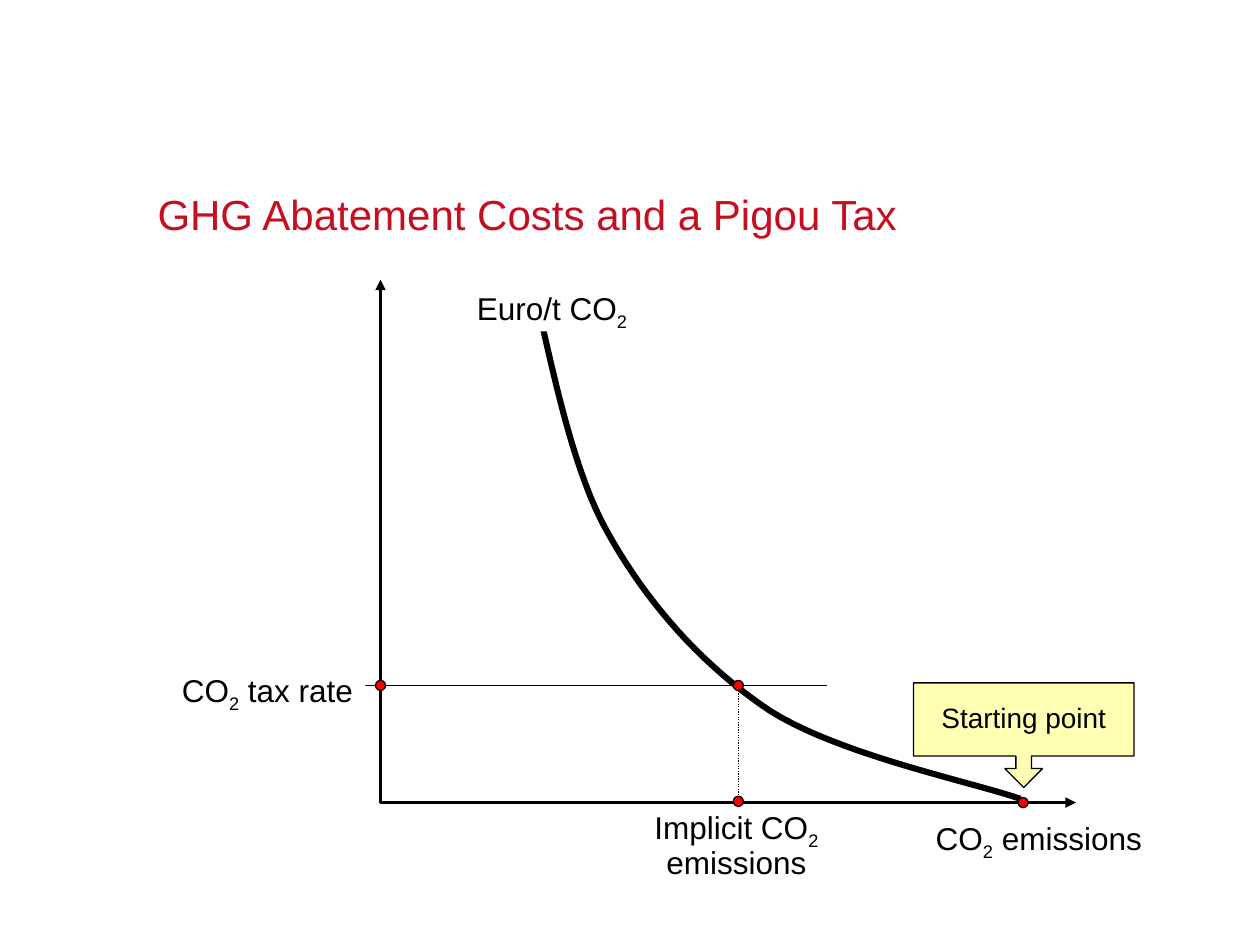
from pptx import Presentation
from pptx.dml.color import RGBColor
from pptx.enum.dml import MSO_LINE
from pptx.enum.shapes import MSO_CONNECTOR, MSO_SHAPE
from pptx.enum.text import MSO_ANCHOR, PP_ALIGN
from pptx.oxml.ns import qn
from pptx.util import Inches, Pt
from lxml.etree import SubElement

COLORS = {"black": "000000", "white": "FFFFFF", "title": "C50E1F",
          "dot": "FF0000", "callout": "FFFFB3"}

prs = Presentation()
prs.slide_width, prs.slide_height = Inches(10), Inches(7.5)
slide = prs.slides.add_slide(prs.slide_layouts[6])
shapes = slide.shapes


def write(shape, text, size=18, color="black", align=PP_ALIGN.CENTER, spacing=0.9,
          anchor=MSO_ANCHOR.TOP, margins=(0.1, 0.05), wrap=True):
    """Fill a shape with one paragraph; a 2 is set as a subscript."""
    frame = shape.text_frame
    frame.word_wrap = wrap
    frame.vertical_anchor = anchor
    frame.margin_left = frame.margin_right = Inches(margins[0])
    frame.margin_top = frame.margin_bottom = Inches(margins[1])
    paragraph = frame.paragraphs[0]
    paragraph.alignment = align
    paragraph.line_spacing = spacing
    for part in filter(None, text.partition("2")):
        run = paragraph.add_run()
        run.text = part
        run.font.name = "Arial"
        run.font.size = Pt(size)
        run.font.color.rgb = RGBColor.from_string(COLORS[color])
        if part == "2":
            run._r.get_or_add_rPr().set("baseline", "-25000")


def add_line(start, end, width=0.75, dotted=False, arrow=False):
    line = shapes.add_connector(MSO_CONNECTOR.STRAIGHT,
                                *(Inches(v) for v in (*start, *end)))
    line.line.color.rgb = RGBColor.from_string(COLORS["black"])
    line.line.width = Pt(width)
    if dotted:
        line.line.dash_style = MSO_LINE.ROUND_DOT
    if arrow:
        SubElement(line.line._get_or_add_ln(), qn("a:tailEnd"), type="triangle")
    SubElement(line._element.spPr, qn("a:effectLst"))


# Title
title = shapes.add_textbox(Inches(1.25), Inches(0.93), Inches(7.41), Inches(0.97))
write(title, "GHG Abatement Costs and a Pigou Tax", size=24, color="title",
      align=PP_ALIGN.LEFT, spacing=Pt(30), anchor=MSO_ANCHOR.BOTTOM, margins=(0, 0))

# Axes and tax level
origin = (3.02, 6.37)
add_line((6.56, 5.44), (2.88, 5.44))
add_line(origin, (8.54, 6.37), width=2, arrow=True)
add_line(origin, (3.02, 2.22), width=2, arrow=True)

# Abatement cost curve, sampled from three cubic Bezier segments
curve_nodes = [(4.23, 2.29), (4.33, 2.61), (4.5, 3.66), (4.82, 4.22), (5.13, 4.78),
               (5.57, 5.28), (6.11, 5.64), (6.66, 5.99), (7.69, 6.2), (8.1, 6.34)]
STEPS = 20
curve_points = [tuple(Inches(v) for v in curve_nodes[0])]
for first in range(0, len(curve_nodes) - 1, 3):
    nodes = curve_nodes[first:first + 4]
    for step in range(1, STEPS + 1):
        t = step / STEPS
        weights = ((1 - t) ** 3, 3 * t * (1 - t) ** 2, 3 * t * t * (1 - t), t ** 3)
        curve_points.append(tuple(
            Inches(sum(w * node[axis] for w, node in zip(weights, nodes)))
            for axis in (0, 1)))
builder = shapes.build_freeform(*curve_points[0])
builder.add_line_segments(curve_points[1:], close=False)
cost_curve = builder.convert_to_shape()
cost_curve.shadow.inherit = False
cost_curve.fill.background()
cost_curve.line.color.rgb = RGBColor.from_string(COLORS["black"])
cost_curve.line.width = Pt(3.5)

# Labels: text, box, alignment, line spacing, white backing
labels = [
    ("Implicit CO2 emissions", (4.88, 6.37, 1.93, 0.65), PP_ALIGN.CENTER, 0.9, False),
    ("Euro/t CO2", (3.17, 2.25, 2.42, 0.38), PP_ALIGN.CENTER, 0.9, True),
    ("CO2 emissions", (6.83, 6.42, 2.83, 0.41), PP_ALIGN.CENTER, 1.1, False),
    ("CO2 tax rate", (0.79, 5.28, 2.11, 0.38), PP_ALIGN.RIGHT, 0.9, True),
]
for text, box, align, spacing, backed in labels:
    label = shapes.add_textbox(*(Inches(v) for v in box))
    if backed:
        label.fill.solid()
        label.fill.fore_color.rgb = RGBColor.from_string(COLORS["white"])
    write(label, text, align=align, spacing=spacing)

# Starting point callout
callout = shapes.add_shape(MSO_SHAPE.DOWN_ARROW_CALLOUT, Inches(7.25), Inches(5.42),
                           Inches(1.75), Inches(0.83))
for index, value in enumerate((0.15, 0.18, 0.18, 0.7)):
    callout.adjustments[index] = value
write(callout, "Starting point", size=16, anchor=MSO_ANCHOR.MIDDLE, wrap=False)

# Dotted drop line and marked points
add_line((5.86, 5.4), (5.86, 6.4), dotted=True)
DOT = 0.08
marked = [(callout, "callout")]
for x, y in [(8.08, 6.33), (2.98, 5.4), (5.82, 5.4), (5.82, 6.32)]:
    point = shapes.add_shape(MSO_SHAPE.OVAL, Inches(x), Inches(y), Inches(DOT), Inches(DOT))
    marked.append((point, "dot"))
for shape, color in marked:
    shape.shadow.inherit = False
    shape.fill.solid()
    shape.fill.fore_color.rgb = RGBColor.from_string(COLORS[color])
    shape.line.color.rgb = RGBColor.from_string(COLORS["black"])
    shape.line.width = Pt(0.75)

prs.save("out.pptx")
